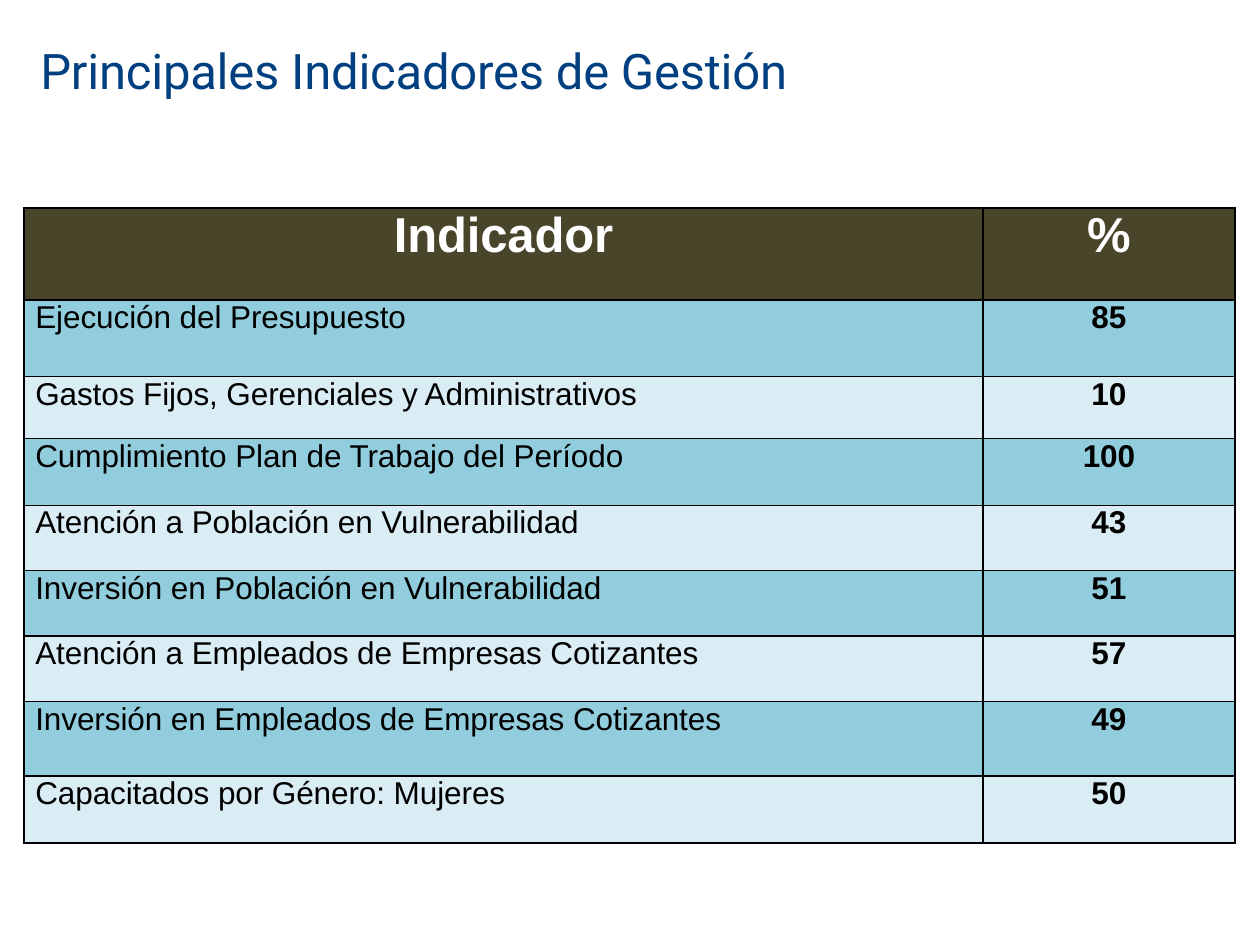
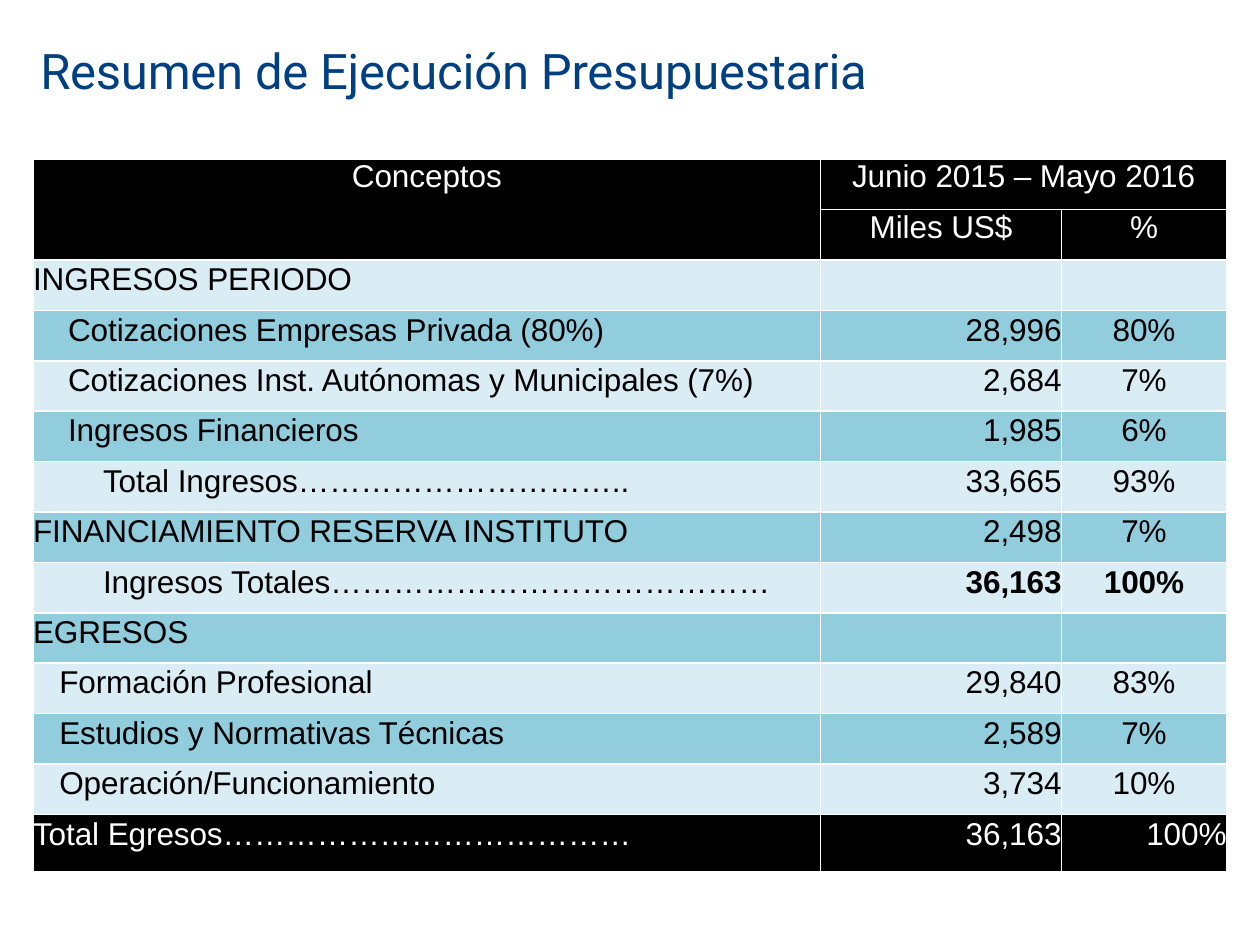
from dataclasses import dataclass

from lxml import etree
from pptx import Presentation
from pptx.dml.color import RGBColor
from pptx.enum.text import MSO_ANCHOR, PP_ALIGN
from pptx.oxml.ns import qn
from pptx.util import Pt

LEFT, MID, RIGHT = PP_ALIGN.LEFT, PP_ALIGN.CENTER, PP_ALIGN.RIGHT
TOP = MSO_ANCHOR.TOP


@dataclass(frozen=True)
class Theme:
    blue: str = "004080"
    black: str = "000000"
    white: str = "FFFFFF"
    olive: str = "49452A"
    deep: str = "92CDDD"
    pale: str = "DBEDF4"
    head: str = "Roboto"
    body: str = "Arial"
    big: int = 28
    small: int = 18


THEME = Theme()

RATES = [
    ("Ejecución del Presupuesto", 85, 43.9),
    ("Gastos Fijos, Gerenciales y Administrativos", 10, 35.3),
    ("Cumplimiento Plan de Trabajo del Período", 100, 38.2),
    ("Atención a Población en Vulnerabilidad", 43, 37.4),
    ("Inversión en Población en Vulnerabilidad", 51, 37.4),
    ("Atención a Empleados de Empresas Cotizantes", 57, 37.4),
    ("Inversión en Empleados de Empresas Cotizantes", 49, 42.5),
    ("Capacitados por Género: Mujeres", 50, 38.2),
]

BUDGET = [
    ("INGRESOS PERIODO", 0, "", ""),
    ("Cotizaciones Empresas Privada (80%)", 20, "28,996", "80%"),
    ("Cotizaciones Inst. Autónomas y Municipales (7%)", 20, "2,684", "7%"),
    ("Ingresos Financieros", 20, "1,985", "6%"),
    ("Total Ingresos…………………………..", 40, "33,665", "93%"),
    ("FINANCIAMIENTO RESERVA INSTITUTO", 0, "2,498", "7%"),
    ("Ingresos Totales……………………………………", 40, "36,163", "100%"),
    ("EGRESOS", 0, "", ""),
    ("Formación Profesional", 15, "29,840", "83%"),
    ("Estudios y Normativas Técnicas", 15, "2,589", "7%"),
    ("Operación/Funcionamiento", 15, "3,734", "10%"),
    ("Total Egresos…………………………………", 0, "36,163", "100%"),
]


def write(frame, text, font=THEME.body, size=THEME.small, ink=THEME.black,
          bold=False, align=LEFT, dent=0, lead=None, track=-0.05):
    para = frame.paragraphs[0]
    para.alignment = align
    para._p.get_or_add_pPr().set("marL", str(Pt(dent)))
    if lead:
        para.line_spacing = Pt(lead)
    para.font.size = Pt(size)
    if not text:
        return
    run = para.add_run()
    run.text = text
    run.font.name = font
    run.font.size = Pt(size)
    run.font.bold = bold
    run.font.color.rgb = RGBColor.from_string(ink)
    run._r.get_or_add_rPr().set("spc", str(round(track * 100)))


def add_page(deck, title):
    page = deck.slides.add_slide(deck.slide_layouts[6])
    frame = page.shapes.add_textbox(
        Pt(13), Pt(10), Pt(694), Pt(72.7)).text_frame
    frame.word_wrap = True
    frame.vertical_anchor = TOP
    frame.margin_left = frame.margin_right = frame.margin_bottom = 0
    frame.margin_top = Pt(13)
    write(frame, title, font=THEME.head, size=THEME.big, ink=THEME.blue,
          dent=10, track=-0.1)
    return page


def edge(cell, ink):
    props = cell._tc.get_or_add_tcPr()
    for spot, side in enumerate(("lnL", "lnR", "lnT", "lnB")):
        line = etree.Element(qn(f"a:{side}"), w=str(Pt(1)))
        fill = etree.SubElement(line, qn("a:solidFill"))
        etree.SubElement(fill, qn("a:srgbClr"), val=ink)
        props.insert(spot, line)


def add_grid(page, left, top, cols, rows, line, band, heads, foots=0):
    grid = page.shapes.add_table(
        len(rows), len(cols), Pt(left), Pt(top), Pt(sum(cols)),
        Pt(sum(rows))).table
    grid.first_row = grid.horz_banding = False
    for col, wide in zip(grid.columns, cols):
        col.width = Pt(wide)
    for spot, (row, high) in enumerate(zip(grid.rows, rows)):
        row.height = Pt(high)
        tint = THEME.deep if spot % 2 else THEME.pale
        if spot < heads or spot >= len(rows) - foots:
            tint = band
        for cell in row.cells:
            cell.margin_left = cell.margin_right = 0
            cell.margin_top = cell.margin_bottom = 0
            cell.vertical_anchor = TOP
            cell.fill.solid()
            cell.fill.fore_color.rgb = RGBColor.from_string(tint)
            edge(cell, line)
    return grid


def show_rates(deck):
    page = add_page(deck, "Principales Indicadores de Gestión")
    highs = [52.6] + [high for _, _, high in RATES]
    grid = add_grid(page, 13.7, 118.8, [548, 144], highs,
                    THEME.black, THEME.olive, heads=1)
    for col, text in enumerate(("Indicador", "%")):
        write(grid.cell(0, col).text_frame, text, size=THEME.big,
              ink=THEME.white, bold=True, align=MID)
    for row, (name, rate, _) in enumerate(RATES, 1):
        write(grid.cell(row, 0).text_frame, name, dent=6.5)
        write(grid.cell(row, 1).text_frame, str(rate), bold=True, align=MID)


def show_budget(deck):
    page = add_page(deck, "Resumen de Ejecución Presupuestaria")
    heads = 2
    last = heads + len(BUDGET) - 1
    grid = add_grid(page, 18.9, 91, [450, 137.7, 94.3],
                    [28.8] * last + [33], THEME.white, THEME.black,
                    heads=heads, foots=1)
    grid.cell(0, 0).merge(grid.cell(1, 0))
    grid.cell(0, 1).merge(grid.cell(0, 2))
    for row, col, text in ((0, 0, "Conceptos"),
                           (0, 1, "Junio 2015 – Mayo 2016"),
                           (1, 1, "Miles US$"), (1, 2, "%")):
        write(grid.cell(row, col).text_frame, text, ink=THEME.white,
              align=MID)
    for row, (name, dent, sum_, rate) in enumerate(BUDGET, heads):
        end = row == last
        look = {"ink": THEME.white if end else THEME.black, "lead": 21.4}
        bold = name.startswith("Ingresos Totales")
        write(grid.cell(row, 0).text_frame, name, dent=dent, **look)
        write(grid.cell(row, 1).text_frame, sum_, bold=bold, align=RIGHT,
              **look)
        write(grid.cell(row, 2).text_frame, rate, bold=bold,
              align=RIGHT if end else MID, **look)


def main():
    deck = Presentation()
    deck.slide_width, deck.slide_height = Pt(720), Pt(540)
    show_rates(deck)
    show_budget(deck)
    deck.save("out.pptx")


if __name__ == "__main__":
    main()
